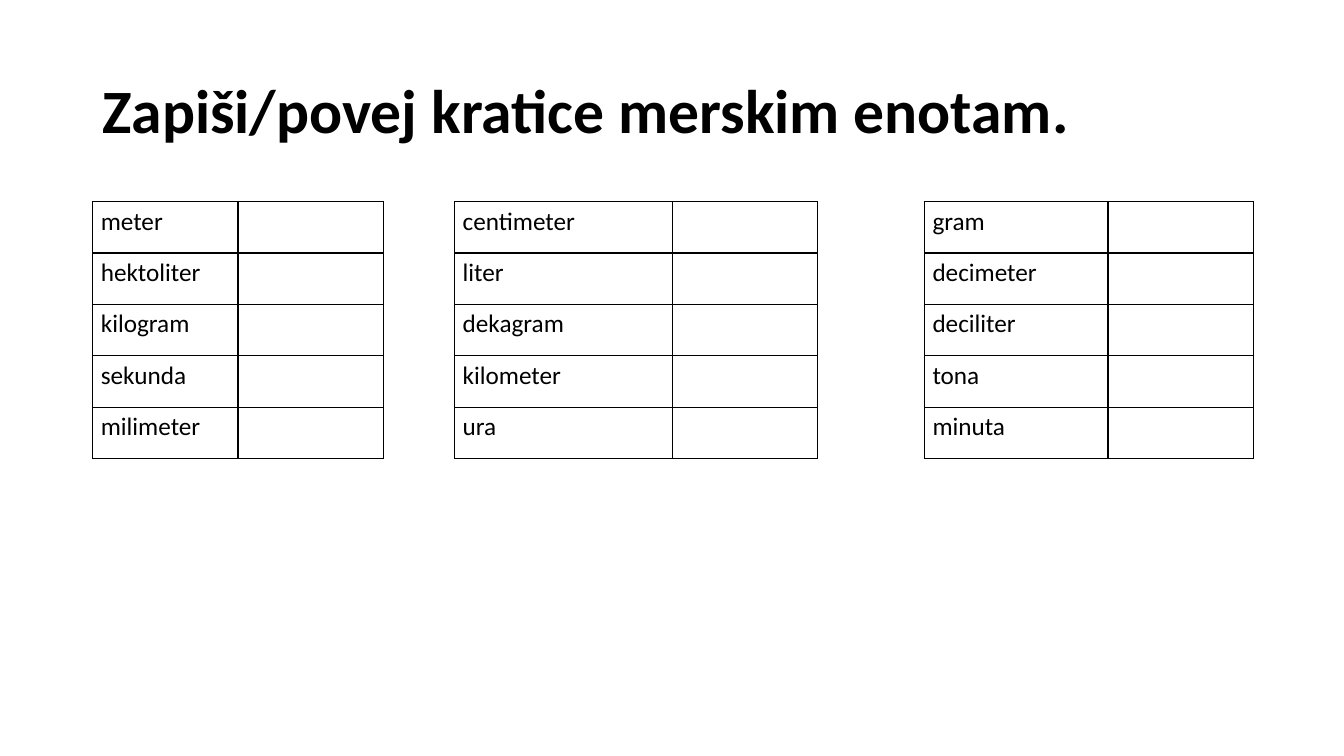
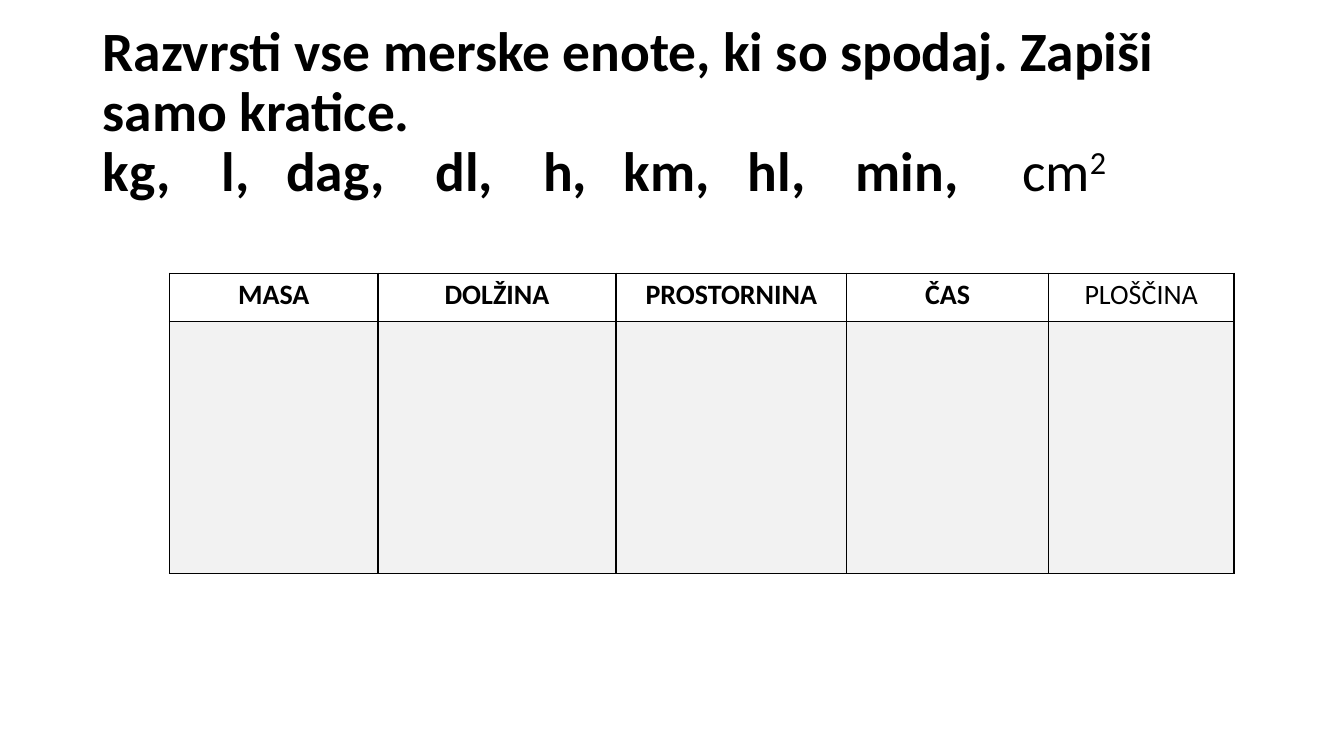
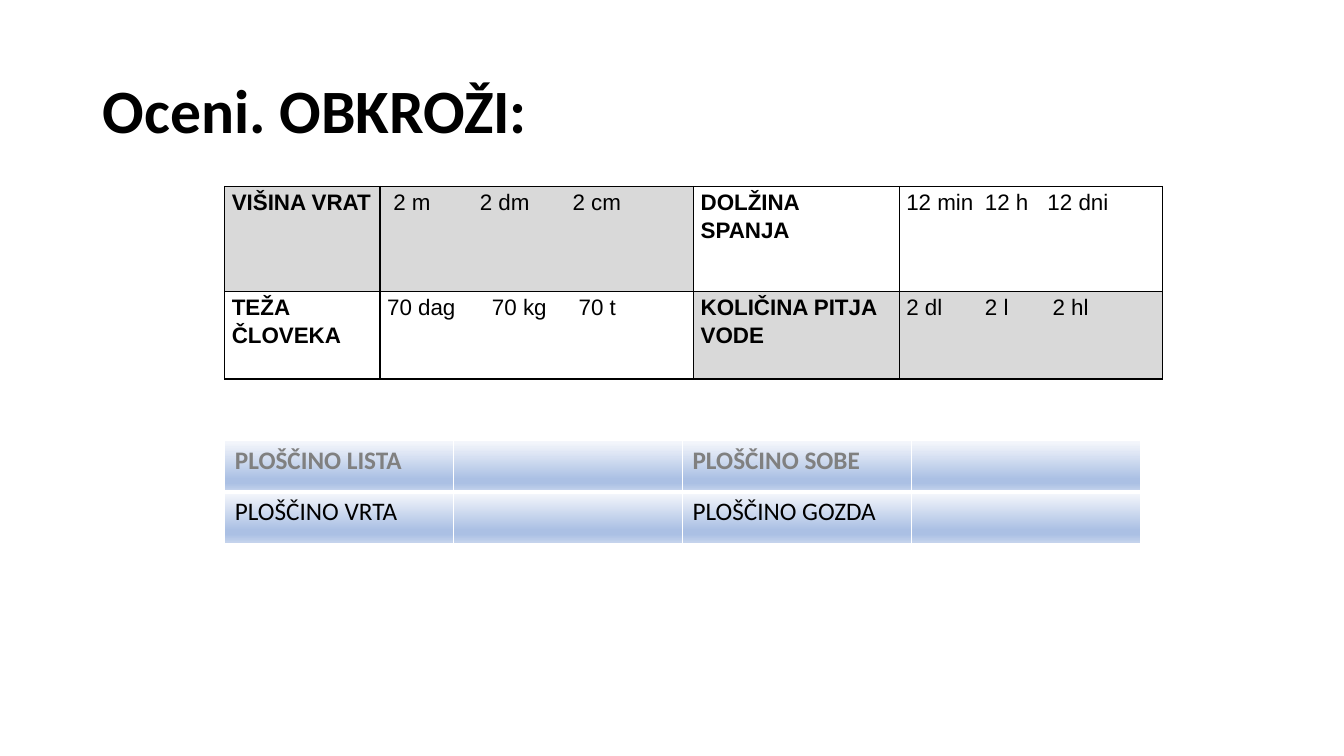
from lxml import etree
from pptx import Presentation
from pptx.dml.color import RGBColor
from pptx.enum.text import MSO_ANCHOR, PP_ALIGN
from pptx.oxml.ns import qn
from pptx.util import Inches, Pt

MIDDLE = MSO_ANCHOR.MIDDLE
CENTER = PP_ALIGN.CENTER


class Theme:
    font = "Calibri"
    plain_font = "Arial"
    black = "000000"
    white = "FFFFFF"
    muted = "808080"
    pale = "F2F2F2"
    grey = "D9D9D9"
    gradient = [(0, "F6F8FC"), (74, "ABC0E4"), (83, "ABC0E4"), (100, "C7D5ED")]
    title_size = 44
    long_title_size = 39.6
    heading_size = 20
    body_size = 18
    small_size = 16
    title_spacing = 0.9
    cell_spacing = 1.15


def add_text(paragraph, text, size, bold=False, font=Theme.font, color=Theme.black,
             spacing=Theme.cell_spacing, stops=()):
    paragraph.line_spacing = spacing
    run = paragraph.add_run()
    run.text = text
    run.font.size = Pt(size)
    run.font.bold = bold
    run.font.name = font
    run.font.color.rgb = RGBColor.from_string(color)
    if stops:
        tab_list = etree.SubElement(paragraph._p.get_or_add_pPr(), qn("a:tabLst"))
        for stop in stops:
            etree.SubElement(tab_list, qn("a:tab"), pos=str(Inches(stop)), algn="l")
    return run


def add_grid(slide, left, top, widths, heights, inset, line=Theme.black, gaps=(), row_rule=1):
    frame = slide.shapes.add_table(len(heights), len(widths), Inches(left), Inches(top),
                                   Inches(sum(widths)), Inches(sum(heights)))
    table = frame.table
    table.first_row = False
    table.horz_banding = False
    for column, width in zip(table.columns, widths):
        column.width = Inches(width)
    for row, height in zip(table.rows, heights):
        row.height = Inches(height)
    last_row = len(heights) - 1
    for row_index, row in enumerate(table.rows):
        for column_index, cell in enumerate(row.cells):
            horizontal = 0 if column_index in gaps else 1
            edges = {
                "a:lnL": 1,
                "a:lnR": 1,
                "a:lnT": horizontal * (row_rule if row_index > 0 else 1),
                "a:lnB": horizontal * (row_rule if row_index < last_row else 1),
            }
            properties = cell._tc.get_or_add_tcPr()
            for tag, width in edges.items():
                edge = etree.SubElement(properties, qn(tag), w=str(Pt(width)))
                if width:
                    fill = etree.SubElement(edge, qn("a:solidFill"))
                    etree.SubElement(fill, qn("a:srgbClr"), val=line)
                else:
                    etree.SubElement(edge, qn("a:noFill"))
            cell.fill.background()
            cell.margin_left = cell.margin_right = Inches(inset)
            cell.margin_top = cell.margin_bottom = 0
    return table


presentation = Presentation()
presentation.slide_width = Inches(13.33)
presentation.slide_height = Inches(7.5)
blank_layout = presentation.slide_layouts[6]

titles = [
    (Theme.title_size, ["Zapiši/povej kratice merskim enotam."]),
    (Theme.long_title_size, ["Razvrsti vse merske enote, ki so spodaj. Zapiši samo kratice."]),
    (Theme.title_size, ["Oceni. OBKROŽI:"]),
]
slides = []
title_frames = []
for size, lines in titles:
    slide = presentation.slides.add_slide(blank_layout)
    text_frame = slide.shapes.add_textbox(Inches(0.92), Inches(0.4), Inches(11.5), Inches(1.45)).text_frame
    text_frame.word_wrap = True
    text_frame.vertical_anchor = MIDDLE
    for line in lines:
        add_text(text_frame.paragraphs[0], line, size, bold=True, spacing=Theme.title_spacing)
    slides.append(slide)
    title_frames.append(text_frame)
names_slide, sorting_slide, estimate_slide = slides

unit_names = [
    ("meter", "centimeter", "gram"),
    ("hektoliter", "liter", "decimeter"),
    ("kilogram", "dekagram", "deciliter"),
    ("sekunda", "kilometer", "tona"),
    ("milimeter", "ura", "minuta"),
]
names_table = add_grid(names_slide, 0.92, 2, [1.44, 1.44, 0.71, 2.16, 1.44, 1.06, 1.82, 1.44],
                       [0.51] * len(unit_names), 0.08, gaps=(2, 5))
for row_index, names in enumerate(unit_names):
    for group, name in enumerate(names):
        cell = names_table.cell(row_index, group * 3)
        add_text(cell.text_frame.paragraphs[0], name, Theme.body_size)

units = ["kg,", "l,", "dag,", "dl,", "h,", "km,", "hl,", "min,", ""]
unit_stops = [1.18, 1.82, 3.3, 4.37, 5.17, 6.4, 7.47, 9.12]
units_line = title_frames[1].add_paragraph()
add_text(units_line, "\t".join(units), Theme.long_title_size, bold=True,
         spacing=Theme.title_spacing, stops=unit_stops)
add_text(units_line, "cm", Theme.long_title_size, spacing=Theme.title_spacing)
exponent = add_text(units_line, "2", Theme.long_title_size, spacing=Theme.title_spacing)
exponent._r.get_or_add_rPr().set("baseline", "30000")

quantities = ["MASA", "DOLŽINA", "PROSTORNINA", "ČAS", "PLOŠČINA"]
sorting_table = add_grid(sorting_slide, 1.68, 2.71, [2.07, 2.36, 2.29, 2, 1.84], [0.48, 2.5], 0.07)
for column_index, quantity in enumerate(quantities):
    paragraph = sorting_table.cell(0, column_index).text_frame.paragraphs[0]
    paragraph.alignment = CENTER
    add_text(paragraph, quantity, Theme.heading_size, bold=quantity != "PLOŠČINA")
    answer = sorting_table.cell(1, column_index)
    answer.fill.solid()
    answer.fill.fore_color.rgb = RGBColor.from_string(Theme.pale)

questions = [
    [("VIŠINA VRAT", " 2 m\t2 dm\t2 cm", (0.92, 1.84)),
     ("DOLŽINA SPANJA", "12 min\t12 h\t12 dni", (0.78, 1.4))],
    [("TEŽA ČLOVEKA", "70 dag\t70 kg\t70 t", (1.04, 1.9)),
     ("KOLIČINA PITJA VODE", "2 dl\t2 l\t2 hl", (0.78, 1.45))],
]
estimate_table = add_grid(estimate_slide, 2.23, 1.85, [1.54, 3.11, 2.04, 2.61], [1.04, 0.87], 0.07)
for row_index, row_questions in enumerate(questions):
    for pair, (question, choices, stops) in enumerate(row_questions):
        question_cell = estimate_table.cell(row_index, pair * 2)
        choices_cell = estimate_table.cell(row_index, pair * 2 + 1)
        add_text(question_cell.text_frame.paragraphs[0], question, Theme.small_size,
                 bold=True, font=Theme.plain_font)
        add_text(choices_cell.text_frame.paragraphs[0], choices, Theme.small_size,
                 font=Theme.plain_font, stops=stops)
        if row_index == pair:
            for cell in (question_cell, choices_cell):
                cell.fill.solid()
                cell.fill.fore_color.rgb = RGBColor.from_string(Theme.grey)

areas = [("PLOŠČINO LISTA", "PLOŠČINO SOBE"), ("PLOŠČINO VRTA", "PLOŠČINO GOZDA")]
area_table = add_grid(estimate_slide, 2.23, 4.37, [2.27] * 4, [0.51] * 2, 0.1,
                      line=Theme.white, row_rule=3)
for row_index, row_areas in enumerate(areas):
    for pair, area in enumerate(row_areas):
        paragraph = area_table.cell(row_index, pair * 2).text_frame.paragraphs[0]
        add_text(paragraph, area, Theme.body_size, bold=row_index == 0, spacing=1.0,
                 color=Theme.muted if row_index == 0 else Theme.black)
    for cell in area_table.rows[row_index].cells:
        cell.margin_top = cell.margin_bottom = Inches(0.05)
        properties = cell._tc.get_or_add_tcPr()
        properties.remove(properties.find(qn("a:noFill")))
        gradient = etree.SubElement(properties, qn("a:gradFill"), rotWithShape="1")
        stop_list = etree.SubElement(gradient, qn("a:gsLst"))
        for position, color in Theme.gradient:
            stop = etree.SubElement(stop_list, qn("a:gs"), pos=str(position * 1000))
            etree.SubElement(stop, qn("a:srgbClr"), val=color)
        etree.SubElement(gradient, qn("a:lin"), ang="5400000", scaled="0")

presentation.save("out.pptx")
